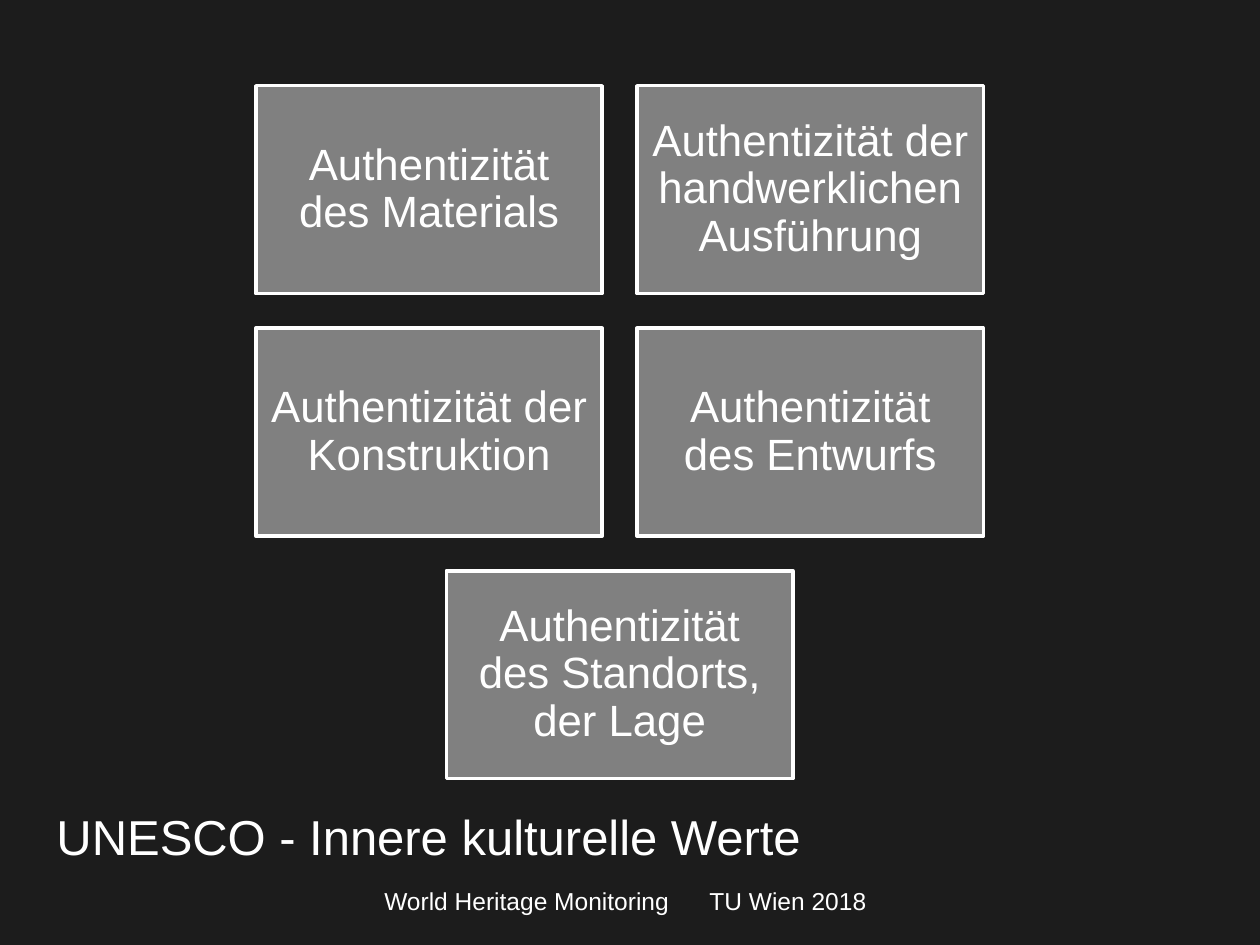
from dataclasses import dataclass

from lxml.etree import SubElement
from pptx import Presentation
from pptx.dml.color import RGBColor as RGB
from pptx.enum.shapes import MSO_SHAPE as Shape
from pptx.enum.text import MSO_ANCHOR as Anchor, PP_ALIGN as Align
from pptx.oxml.ns import qn
from pptx.util import Inches as In, Pt


@dataclass(frozen=True)
class Theme:
    font: str = "Arial"
    back: RGB = RGB(0x1C, 0x1C, 0x1C)
    card: RGB = RGB(0x80, 0x80, 0x80)
    ink: RGB = RGB(0xFF, 0xFF, 0xFF)
    title: int = 28
    body: int = 25
    foot: int = 14
    line: int = 2


THEME = Theme()

# Card grid: the gap is a tenth of the card width in both directions.
LEFT, TOP, WIDE, HIGH = 2.03, 0.68, 2.75, 1.65
GAP = WIDE / 10

# Column, row, label
CARDS = [
    (0, 0, "Authentizität des Materials"),
    (1, 0, "Authentizität der handwerklichen Ausführung"),
    (0, 1, "Authentizität der Konstruktion"),
    (1, 1, "Authentizität des Entwurfs"),
    (0.5, 2, "Authentizität des Standorts, der Lage"),
]


def add_run(para, text, size):
    run = para.add_run()
    run.text = text
    run.font.name = THEME.font
    run.font.size = Pt(size)
    run.font.color.rgb = THEME.ink


def add_card(slide, col, row, label):
    left = LEFT + col * (WIDE + GAP)
    top = TOP + row * (HIGH + GAP)
    card = slide.shapes.add_shape(
        Shape.RECTANGLE, In(left), In(top), In(WIDE), In(HIGH))
    card.shadow.inherit = False
    card.fill.solid()
    card.fill.fore_color.rgb = THEME.card
    card.line.color.rgb = THEME.ink
    card.line.width = Pt(THEME.line)
    frame = card.text_frame
    frame.word_wrap = True
    frame.vertical_anchor = Anchor.MIDDLE
    frame.margin_left = frame.margin_right = In(0.1)
    frame.margin_top = frame.margin_bottom = In(0.1)
    para = frame.paragraphs[0]
    para.alignment = Align.CENTER
    para.line_spacing = 0.9
    add_run(para, label, THEME.body)


def add_text(slide, left, top, wide, high):
    """Add an empty wrapping text box and return its frame."""
    box = slide.shapes.add_textbox(In(left), In(top), In(wide), In(high))
    box.text_frame.word_wrap = True
    return box.text_frame


def add_title(slide, text):
    frame = add_text(slide, 0.35, 6.35, 9.53, 0.57)
    add_run(frame.paragraphs[0], text, THEME.title)


def add_foot(slide, name, place):
    """Set two parts on one line, the second at a tab stop."""
    frame = add_text(slide, 1.06, 6.98, 7.8, 0.24)
    frame.margin_left = In(1.99)
    para = frame.paragraphs[0]
    para.alignment = Align.LEFT
    tabs = SubElement(para._p.get_or_add_pPr(), qn("a:tabLst"))
    SubElement(tabs, qn("a:tab"), pos=str(In(2.58)), algn="l")
    add_run(para, name + "\t", THEME.foot)
    add_run(para, place, THEME.foot)


def main():
    deck = Presentation()
    deck.slide_width, deck.slide_height = In(10), In(7.5)
    slide = deck.slides.add_slide(deck.slide_layouts[6])
    slide.background.fill.solid()
    slide.background.fill.fore_color.rgb = THEME.back
    add_foot(slide, "World Heritage Monitoring", "TU Wien 2018")
    for col, row, label in CARDS:
        add_card(slide, col, row, label)
    add_title(slide, "UNESCO - Innere kulturelle Werte")
    deck.save("out.pptx")


if __name__ == "__main__":
    main()
